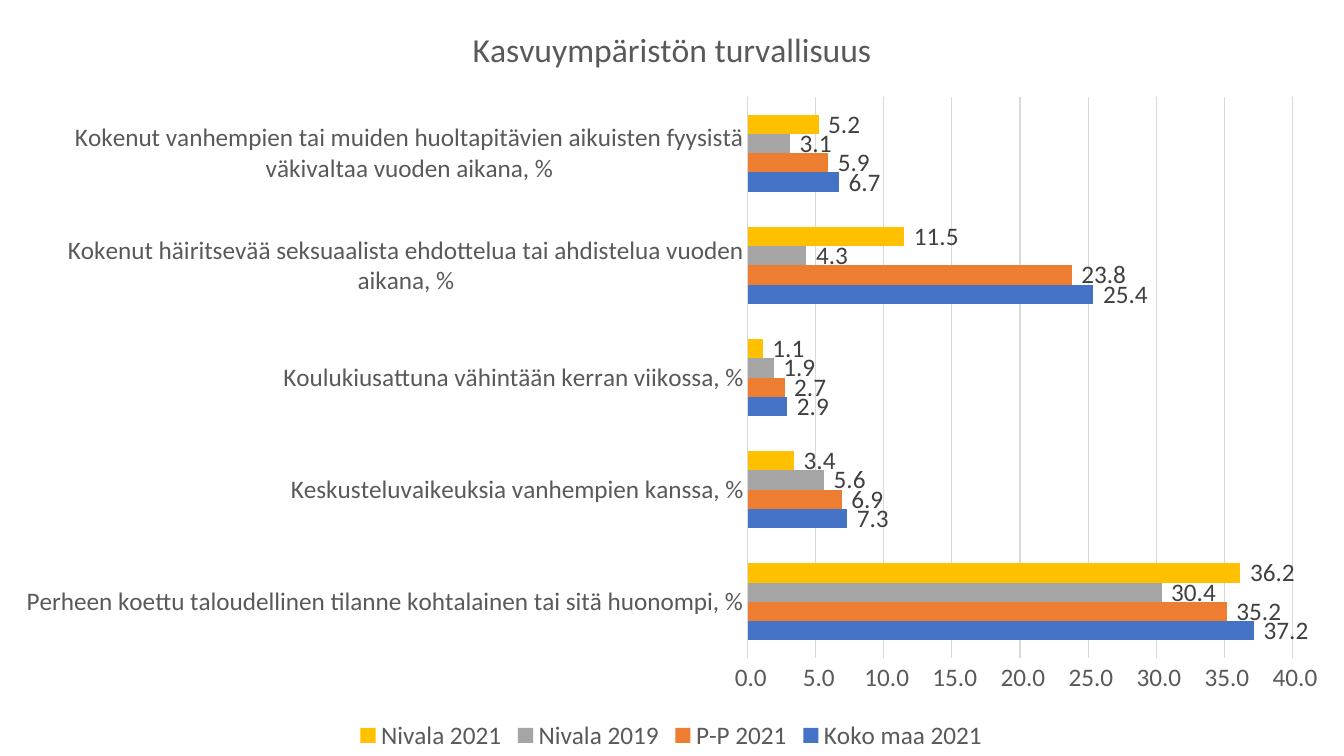
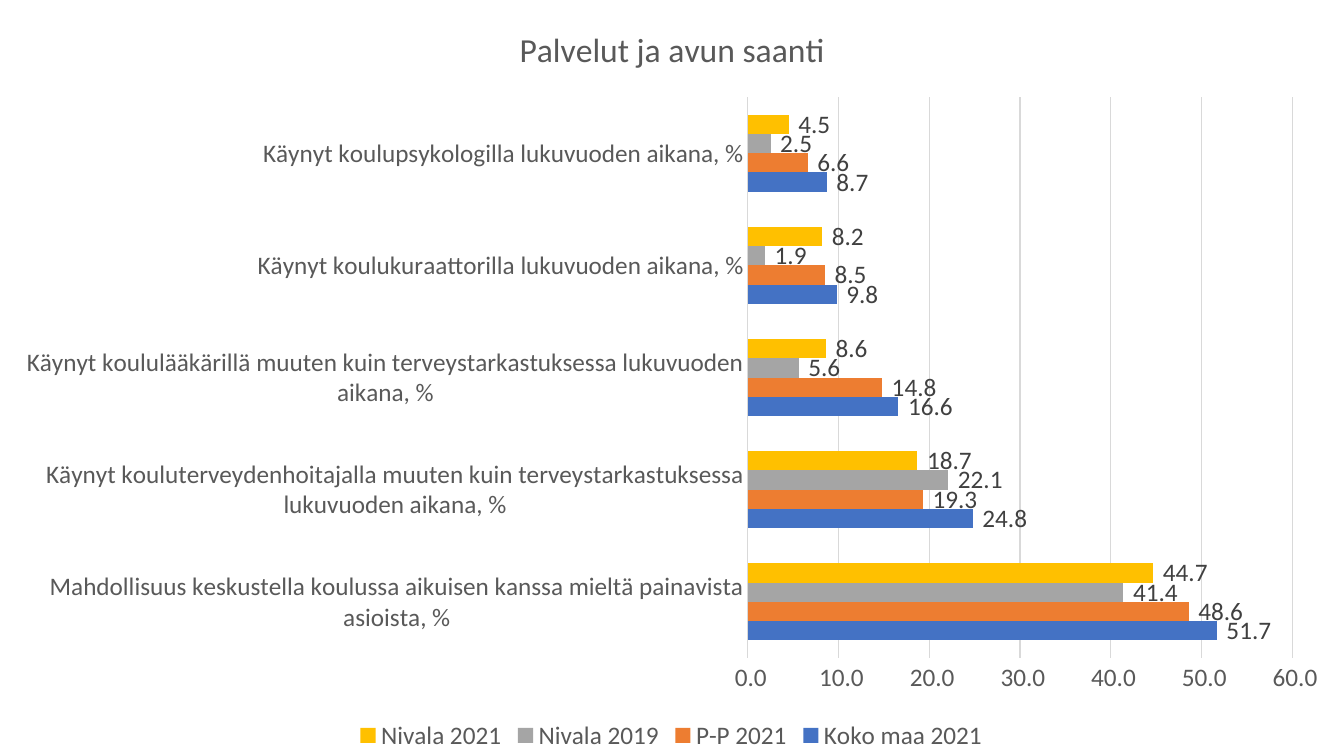
import pptx
import pptx.chart.data
import pptx.dml.color
import pptx.enum.chart
import pptx.oxml
import pptx.oxml.ns
import pptx.util

Inches = pptx.util.Inches
Pt = pptx.util.Pt
RGBColor = pptx.dml.color.RGBColor
qn = pptx.oxml.ns.qn

SLIDE_WIDTH, SLIDE_HEIGHT = Inches(13.33), Inches(7.5)
FONT = "Calibri"
NUMBER_FORMAT = "#\\ ##0.0"
GREY_TEXT = RGBColor(0x59, 0x59, 0x59)
LABEL_TEXT = RGBColor(0x40, 0x40, 0x40)
GRID_LINE = RGBColor(0xD9, 0xD9, 0xD9)
BLUE = RGBColor(0x44, 0x72, 0xC4)
ORANGE = RGBColor(0xED, 0x7D, 0x31)
GREY = RGBColor(0xA5, 0xA5, 0xA5)
GOLD = RGBColor(0xFF, 0xC0, 0x00)

GROUPS = {
    "Koko maa 2021": BLUE,
    "P-P 2021": ORANGE,
    "Nivala 2019": GREY,
    "Nivala 2021": GOLD,
}
TITLE_FONT = {"name": FONT, "size": Pt(24), "bold": False}
BODY_FONT = {"name": FONT, "size": Pt(18), "bold": False}
PLOT_LAYOUT = {"x": 0.5565, "y": 0.1285, "w": 0.405, "h": 0.742}
LEGEND_LAYOUT = {"x": 0.262, "y": 0.946}

SAFETY = {
    "title": "Kasvuympäristön turvallisuus",
    "axis": (40, 5),
    "rows": {
        "Perheen koettu taloudellinen tilanne kohtalainen tai sitä huonompi, %":
            (37.2, 35.2, 30.4, 36.2),
        "Keskusteluvaikeuksia vanhempien kanssa, %": (7.3, 6.9, 5.6, 3.4),
        "Koulukiusattuna vähintään kerran viikossa, %": (2.9, 2.7, 1.9, 1.1),
        "Kokenut häiritsevää seksuaalista ehdottelua tai ahdistelua vuoden aikana, %":
            (25.4, 23.8, 4.3, 11.5),
        "Kokenut vanhempien tai muiden huoltapitävien aikuisten fyysistä "
        "väkivaltaa vuoden aikana, %": (6.7, 5.9, 3.1, 5.2),
    },
}
SERVICES = {
    "title": "Palvelut ja avun saanti",
    "axis": (60, 10),
    "rows": {
        "Mahdollisuus keskustella koulussa aikuisen kanssa mieltä painavista asioista, %":
            (51.7, 48.6, 41.4, 44.7),
        "Käynyt kouluterveydenhoitajalla muuten kuin terveystarkastuksessa "
        "lukuvuoden aikana, %": (24.8, 19.3, 22.1, 18.7),
        "Käynyt koululääkärillä muuten kuin terveystarkastuksessa lukuvuoden aikana, %":
            (16.6, 14.8, 5.6, 8.6),
        "Käynyt koulukuraattorilla lukuvuoden aikana, %": (9.8, 8.5, 1.9, 8.2),
        "Käynyt koulupsykologilla lukuvuoden aikana, %": (8.7, 6.6, 2.5, 4.5),
    },
}


def apply(target, values):
    for name, value in values.items():
        setattr(target, name, value)


def style_font(font, values, color):
    apply(font, values)
    font.color.rgb = color


def style_line(line):
    line.color.rgb = GRID_LINE
    line.width = Pt(0.75)


def set_layout(parent, position, fractions, is_plot=False):
    for previous in parent.findall(qn("c:layout")):
        parent.remove(previous)
    layout = pptx.oxml.parse_xml(
        '<c:layout xmlns:c="http://schemas.openxmlformats.org/drawingml/2006/chart">'
        "<c:manualLayout/></c:layout>")
    settings = {"layoutTarget": "inner"} if is_plot else {}
    settings.update({"xMode": "edge", "yMode": "edge"}, **fractions)
    for tag, value in settings.items():
        setting = layout[0].makeelement(qn("c:" + tag), {"val": str(value)})
        layout[0].append(setting)
    parent.insert(position, layout)


def style_axes(chart, maximum, step):
    ticks = pptx.enum.chart.XL_TICK_MARK.NONE
    for axis in (chart.category_axis, chart.value_axis):
        apply(axis, {"major_tick_mark": ticks, "minor_tick_mark": ticks})
        style_font(axis.tick_labels.font, BODY_FONT, GREY_TEXT)
    chart.category_axis.has_major_gridlines = False
    style_line(chart.category_axis.format.line)
    scale = chart.value_axis
    apply(scale, {"minimum_scale": 0, "maximum_scale": maximum,
                  "major_unit": step, "has_major_gridlines": True})
    apply(scale.tick_labels, {"number_format": NUMBER_FORMAT,
                              "number_format_is_linked": False})
    scale.format.line.fill.background()
    style_line(scale.major_gridlines.format.line)


def style_bars(plot):
    apply(plot, {"gap_width": 182, "vary_by_categories": False})
    for group, color in zip(plot.series, GROUPS.values()):
        group.format.fill.solid()
        group.format.fill.fore_color.rgb = color
        group.invert_if_negative = False
        labels = group.data_labels
        apply(labels, {
            "show_value": True,
            "position": pptx.enum.chart.XL_LABEL_POSITION.OUTSIDE_END,
            "number_format": NUMBER_FORMAT,
            "number_format_is_linked": False,
        })
        style_font(labels.font, BODY_FONT, LABEL_TEXT)


def style_legend(chart):
    chart.has_legend = True
    apply(chart.legend, {
        "position": pptx.enum.chart.XL_LEGEND_POSITION.BOTTOM,
        "include_in_layout": False,
    })
    style_font(chart.legend.font, BODY_FONT, GREY_TEXT)
    set_layout(chart.legend._element, 1, LEGEND_LAYOUT)


def add_survey_chart(slide, survey, left, top, width, height):
    results = pptx.chart.data.CategoryChartData(number_format=NUMBER_FORMAT)
    results.categories = list(survey["rows"])
    for name, values in zip(GROUPS, zip(*survey["rows"].values())):
        results.add_series(name, values)
    chart = slide.shapes.add_chart(
        pptx.enum.chart.XL_CHART_TYPE.BAR_CLUSTERED,
        left, top, width, height, results).chart
    apply(chart.font, BODY_FONT)
    chart.has_title = True
    heading = chart.chart_title.text_frame.paragraphs[0].add_run()
    heading.text = survey["title"]
    style_font(heading.font, TITLE_FONT, GREY_TEXT)
    chart.chart_title.include_in_layout = False
    style_axes(chart, *survey["axis"])
    style_bars(chart.plots[0])
    style_legend(chart)
    set_layout(chart._chartSpace.chart.plotArea, 0, PLOT_LAYOUT, is_plot=True)


def main():
    deck = pptx.Presentation()
    apply(deck, {"slide_width": SLIDE_WIDTH, "slide_height": SLIDE_HEIGHT})
    for survey in (SAFETY, SERVICES):
        slide = deck.slides.add_slide(deck.slide_layouts[6])
        add_survey_chart(slide, survey, Inches(0), Inches(0),
                         SLIDE_WIDTH, SLIDE_HEIGHT)
    deck.save("out.pptx")


if __name__ == "__main__":
    main()
